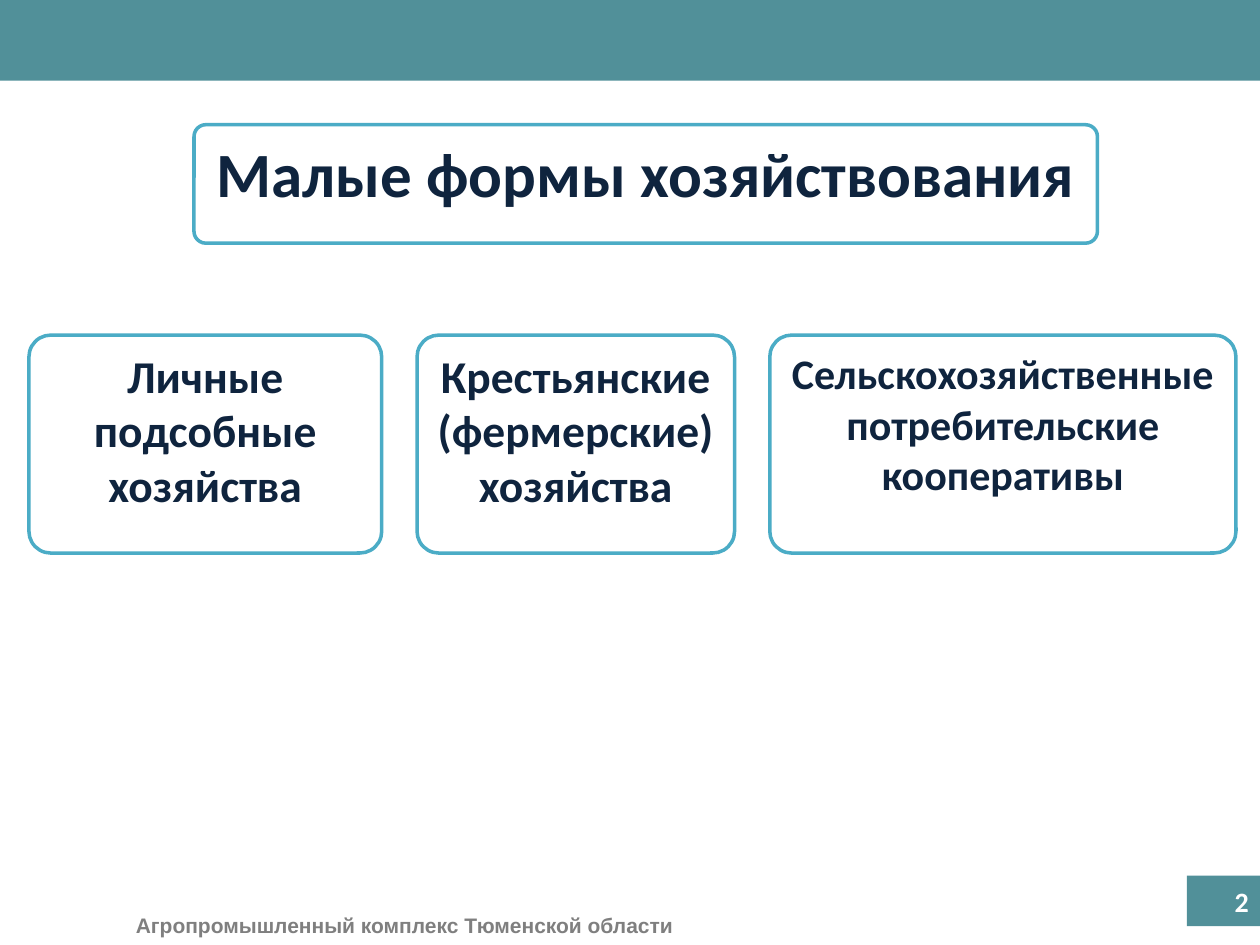
from dataclasses import dataclass

from pptx import Presentation
from pptx.dml.color import RGBColor
from pptx.enum.shapes import MSO_SHAPE
from pptx.enum.text import MSO_ANCHOR, PP_ALIGN
from pptx.util import Inches, Pt

RECTANGLE = MSO_SHAPE.RECTANGLE
ROUNDED_RECTANGLE = MSO_SHAPE.ROUNDED_RECTANGLE
TOP, MIDDLE = MSO_ANCHOR.TOP, MSO_ANCHOR.MIDDLE
LEFT, CENTER, RIGHT = PP_ALIGN.LEFT, PP_ALIGN.CENTER, PP_ALIGN.RIGHT
BLANK_LAYOUT = 6


@dataclass(frozen=True)
class Theme:
    band: str = "519099"
    box_fill: str = "FFFFFF"
    box_line: str = "4BACC6"
    box_text: str = "0F243E"
    footer_text: str = "7F7F7F"
    number_text: str = "FFFFFF"
    body_font: str = "Calibri"
    footer_font: str = "Arial"
    title_size: int = 36
    box_size: int = 26
    long_box_size: int = 24
    number_size: int = 16
    footer_size: int = 12
    line_width: int = 2
    corner: float = 0.1


class SlideBuilder:
    def __init__(self, slide, theme):
        self.slide = slide
        self.theme = theme

    def _shape(self, kind, bounds, fill):
        shape = self.slide.shapes.add_shape(kind, *map(Inches, bounds))
        shape.shadow.inherit = False
        shape.fill.solid()
        shape.fill.fore_color.rgb = RGBColor.from_string(fill)
        return shape

    def _write(self, shape, text, size, color, font, align, anchor, wrap=True):
        frame = shape.text_frame
        frame.word_wrap = wrap
        frame.vertical_anchor = anchor
        paragraph = frame.paragraphs[0]
        paragraph.text = text
        paragraph.alignment = align
        paragraph.font.name = font
        paragraph.font.size = Pt(size)
        paragraph.font.bold = True
        paragraph.font.color.rgb = RGBColor.from_string(color)

    def band(self, *bounds):
        self._shape(RECTANGLE, bounds, self.theme.band).line.fill.background()

    def box(self, text, size, *bounds):
        theme = self.theme
        shape = self._shape(ROUNDED_RECTANGLE, bounds, theme.box_fill)
        shape.adjustments[0] = theme.corner
        shape.line.color.rgb = RGBColor.from_string(theme.box_line)
        shape.line.width = Pt(theme.line_width)
        self._write(shape, text, size, theme.box_text, theme.body_font, CENTER, TOP)

    def footer(self, text, *bounds):
        theme = self.theme
        shape = self.slide.shapes.add_textbox(*map(Inches, bounds))
        self._write(shape, text, theme.footer_size, theme.footer_text,
                    theme.footer_font, LEFT, TOP, wrap=False)

    def page_number(self, text, *bounds):
        theme = self.theme
        shape = self.slide.shapes.add_textbox(*map(Inches, bounds))
        self._write(shape, text, theme.number_size, theme.number_text,
                    theme.body_font, RIGHT, MIDDLE)


def main():
    presentation = Presentation()
    presentation.slide_width = Inches(10)
    presentation.slide_height = Inches(7.5)
    theme = Theme()
    slide = presentation.slides.add_slide(presentation.slide_layouts[BLANK_LAYOUT])
    builder = SlideBuilder(slide, theme)

    builder.band(0, 0, 10, 0.64)
    builder.band(9.42, 6.95, 0.58, 0.4)
    builder.footer("Агропромышленный комплекс Тюменской области", 0.98, 7.19, 4.51, 0.3)
    builder.page_number("2", 7.68, 6.95, 2.33, 0.4)

    builder.box("Малые формы хозяйствования", theme.title_size, 1.54, 0.99, 7.17, 0.94)

    farm_types = [
        ("Личные подсобные хозяйства", theme.box_size, 2.8),
        ("Крестьянские (фермерские) хозяйства", theme.box_size, 2.52),
        ("Сельскохозяйственные потребительские кооперативы", theme.long_box_size, 3.7),
    ]
    left, top, height, gap = 0.23, 2.66, 1.73, 0.28
    for text, size, width in farm_types:
        builder.box(text, size, left, top, width, height)
        left += width + gap

    presentation.save("out.pptx")


if __name__ == "__main__":
    main()
